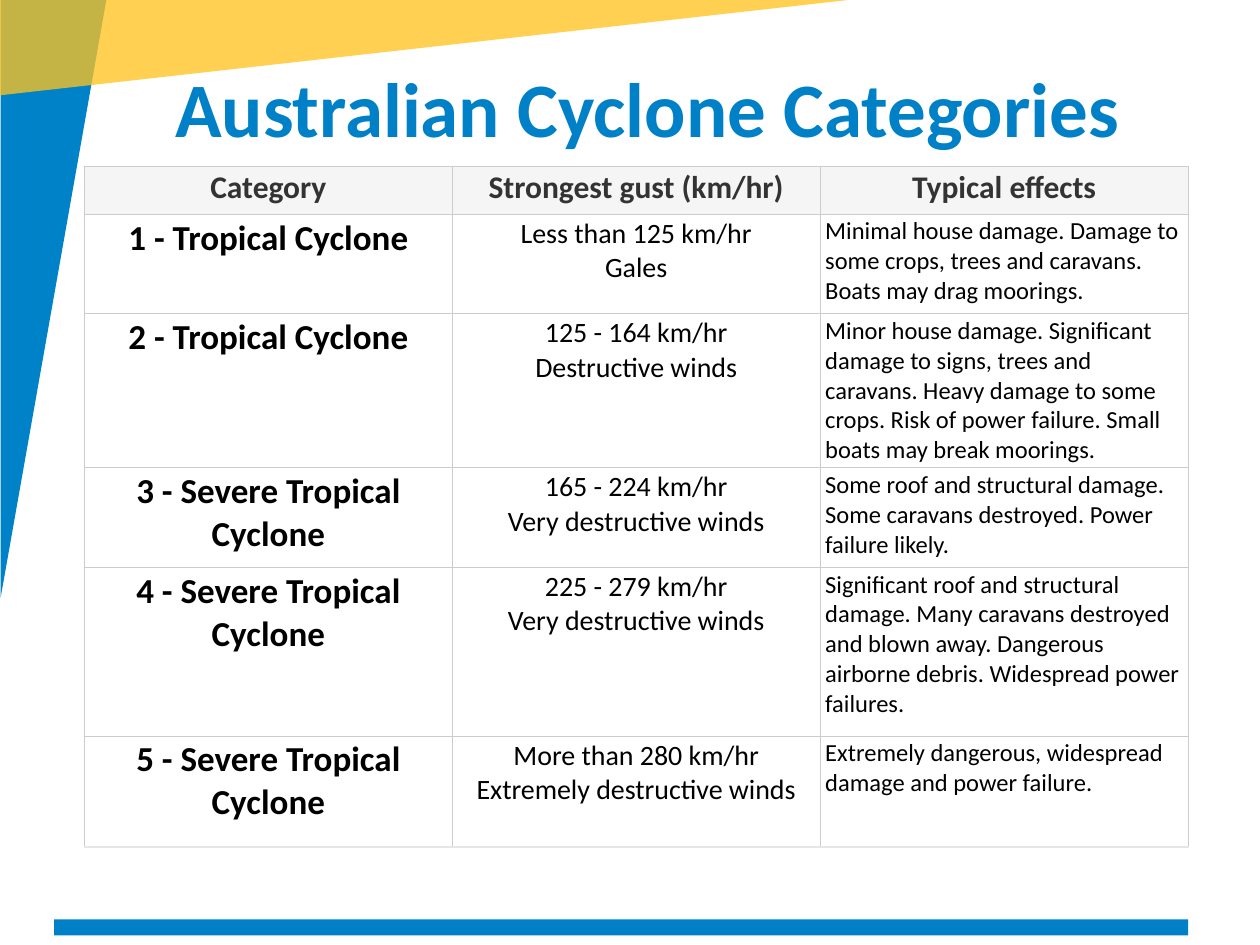
from lxml.etree import SubElement
from pptx import Presentation
from pptx.dml.color import RGBColor
from pptx.enum.shapes import MSO_SHAPE
from pptx.enum.text import MSO_ANCHOR, PP_ALIGN
from pptx.oxml.ns import qn
from pptx.util import Inches, Pt

COLORS = {
    "blue": "0082C8", "title": "0081C7", "yellow": "FFC31E", "heading": "333333",
    "text": "000000", "header": "F5F5F5", "body": "FFFFFF",
    "border": "CCCCCC", "last border": "E6E6E6",
}
WIDTH, HEIGHT = 10, 7.5

HEADINGS = ("Category", "Strongest gust (km/hr)", "Typical effects")
# Category, gust speed, wind type, typical effects
CYCLONES = [
    ("1 - Tropical Cyclone", "Less than 125 km/hr", "Gales",
     "Minimal house damage. Damage to some crops, trees and caravans. "
     "Boats may drag moorings."),
    ("2 - Tropical Cyclone", "125 - 164 km/hr", "Destructive winds",
     "Minor house damage. Significant damage to signs, trees and caravans. "
     "Heavy damage to some crops. Risk of power failure. "
     "Small boats may break moorings."),
    ("3 - Severe Tropical Cyclone", "165 - 224 km/hr", "Very destructive winds",
     "Some roof and structural damage. Some caravans destroyed. "
     "Power failure likely."),
    ("4 - Severe Tropical Cyclone", "225 - 279 km/hr", "Very destructive winds",
     "Significant roof and structural damage. Many caravans destroyed and "
     "blown away. Dangerous airborne debris. Widespread power failures."),
    ("5 - Severe Tropical Cyclone", "More than 280 km/hr", "Extremely destructive winds",
     "Extremely dangerous, widespread damage and power failure."),
]
ROW_HEIGHTS = (0.38, 0.79, 1.21, 0.79, 1.34, 0.88)
# Size, bold, alignment of each body column
COLUMN_STYLES = (
    (20, True, PP_ALIGN.CENTER),
    (16, False, PP_ALIGN.CENTER),
    (14, False, PP_ALIGN.LEFT),
)


def rgb(name):
    return RGBColor.from_string(COLORS[name])


class CycloneSlide:
    font = "Calibri"

    def __init__(self, deck):
        self.slide = deck.slides.add_slide(deck.slide_layouts[5])

    def box(self, x, y, w, h):
        """Turn shares of the slide's size into lengths."""
        return (Inches(x * WIDTH), Inches(y * HEIGHT),
                Inches(w * WIDTH), Inches(h * HEIGHT))

    def format_text(self, paragraph, size, color, bold, align):
        paragraph.alignment = align
        for run in paragraph.runs:
            run.font.name = self.font
            run.font.size = Pt(size)
            run.font.bold = bold
            run.font.color.rgb = rgb(color)

    def title(self, text, *place):
        heading = self.slide.shapes.title
        heading.left, heading.top, heading.width, heading.height = self.box(*place)
        frame = heading.text_frame
        frame.text = text
        frame.word_wrap = True
        frame.vertical_anchor = MSO_ANCHOR.TOP
        self.format_text(frame.paragraphs[0], 44, "title", True, PP_ALIGN.LEFT)

    def shape(self, kind, color, *place, rotation=0, flip=False, opacity=100):
        panel = self.slide.shapes.add_shape(kind, *self.box(*place))
        panel.shadow.inherit = False
        panel.rotation = rotation
        panel.fill.solid()
        panel.fill.fore_color.rgb = rgb(color)
        panel.line.fill.background()
        properties = panel._element.spPr
        if flip:
            properties.find(qn("a:xfrm")).set("flipH", "1")
        if opacity < 100:
            tint = properties.find(qn("a:solidFill")).find(qn("a:srgbClr"))
            SubElement(tint, qn("a:alpha")).set("val", str(opacity * 1000))

    def border(self, cell, bottom):
        for side in "LRTB":
            line = SubElement(cell._tc.get_or_add_tcPr(), qn(f"a:ln{side}"), w=str(Pt(0.75)))
            fill = SubElement(line, qn("a:solidFill"))
            color = bottom if side == "B" else "border"
            SubElement(fill, qn("a:srgbClr"), val=COLORS[color])

    def cell(self, cell, text, size, bold, align, color, fill, bottom):
        cell.margin_left = cell.margin_right = Inches(0.04)
        cell.margin_top = cell.margin_bottom = Inches(0.02)
        self.border(cell, bottom)
        cell.fill.solid()
        cell.fill.fore_color.rgb = rgb(fill)
        cell.text_frame.text = text
        self.format_text(cell.text_frame.paragraphs[0], size, color, bold, align)

    def table(self, headings, rows, heights, *place):
        grid = self.slide.shapes.add_table(
            len(rows) + 1, len(headings), *self.box(*place)).table
        grid.horz_banding = False
        for row, height in zip(grid.rows, heights):
            row.height = Inches(height)
        for column, heading in enumerate(headings):
            self.cell(grid.cell(0, column), heading, 18, True, PP_ALIGN.CENTER,
                      "heading", "header", "border")
        for number, row in enumerate(rows, 1):
            bottom = "last border" if number == len(rows) else "border"
            for column, (text, style) in enumerate(zip(row, COLUMN_STYLES)):
                self.cell(grid.cell(number, column), text, *style, "text", "body", bottom)


def main():
    deck = Presentation()
    deck.slide_width, deck.slide_height = Inches(WIDTH), Inches(HEIGHT)
    page = CycloneSlide(deck)

    # Corner triangles and footer bar
    page.shape(MSO_SHAPE.RIGHT_TRIANGLE, "blue", -0.195, 0.26, 0.475, 0.112, rotation=90)
    page.shape(MSO_SHAPE.RIGHT_TRIANGLE, "yellow", -0.021, -0.003, 0.714, 0.107,
               rotation=180, flip=True, opacity=77)
    page.shape(MSO_SHAPE.RECTANGLE, "title", 0.043, 0.973, 0.9, 0.017)

    # Title
    page.title("Australian Cyclone Categories", 0.129, 0.057, 0.814, 0.112)

    # Categories, with the wind type on a second line
    rows = [(category, f"{speed}\v{wind}", effects)
            for category, speed, wind, effects in CYCLONES]
    page.table(HEADINGS, rows, ROW_HEIGHTS, 0.067, 0.176, 0.876, 0.719)

    deck.save("out.pptx")


if __name__ == "__main__":
    main()
